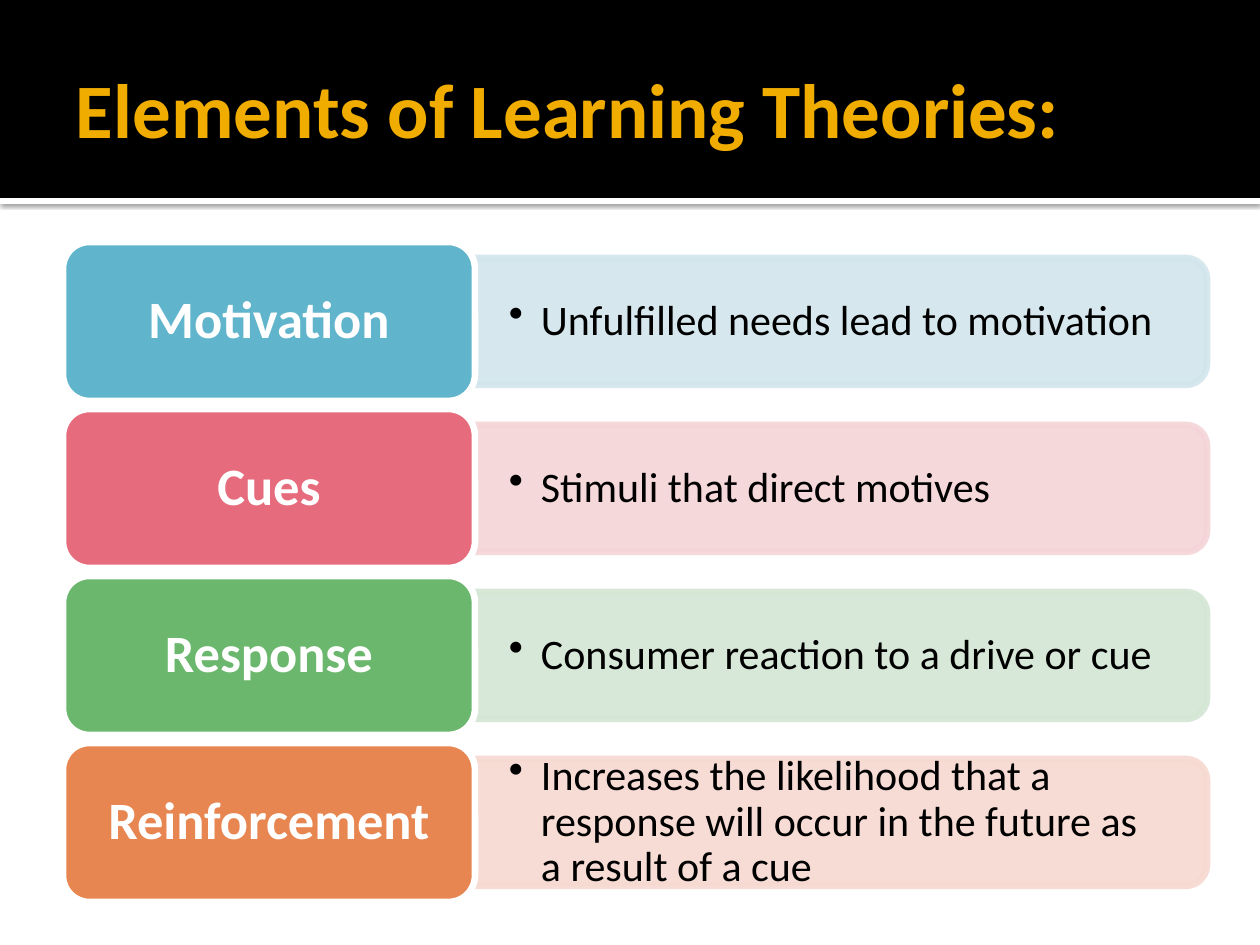
from lxml.etree import SubElement
from pptx import Presentation
from pptx.dml.color import RGBColor
from pptx.enum.shapes import MSO_SHAPE as Shape
from pptx.enum.text import MSO_ANCHOR as Anchor, MSO_AUTO_SIZE as AutoSize, PP_ALIGN as Align
from pptx.oxml.ns import qn
from pptx.util import Pt

PX = 914400 / 126
BLACK = RGBColor(0x00, 0x00, 0x00)
WHITE = RGBColor(0xFF, 0xFF, 0xFF)
GOLD = RGBColor(0xF0, 0xAD, 0x00)
BLUE, PALE_BLUE = RGBColor(0x60, 0xB5, 0xCC), RGBColor(0xD2, 0xE5, 0xEC)
PINK, PALE_PINK = RGBColor(0xE6, 0x6C, 0x7D), RGBColor(0xF5, 0xD4, 0xD7)
GREEN, PALE_GREEN = RGBColor(0x6B, 0xB7, 0x6D), RGBColor(0xD4, 0xE6, 0xD4)
ORANGE, PALE_ORANGE = RGBColor(0xE8, 0x86, 0x51), RGBColor(0xF6, 0xD9, 0xD0)

ELEMENTS = [
    ("Motivation", "Unfulfilled needs lead to motivation", BLUE, PALE_BLUE),
    ("Cues", "Stimuli that direct motives", PINK, PALE_PINK),
    ("Response", "Consumer reaction to a drive or cue", GREEN, PALE_GREEN),
    ("Reinforcement",
     "Increases the likelihood that a response will occur in the future as a result of a cue",
     ORANGE, PALE_ORANGE),
]
FIRST_TOP, ROW_PITCH = 242, 167
LABEL_LEFT, LABEL_WIDTH, LABEL_HEIGHT = 63, 412, 159
BAR_LEFT, BAR_WIDTH, BAR_HEIGHT = 474, 733, 127


def write_text(shape, text, size, color, bold=False, align=Align.LEFT,
               insets=(13, 6, 6, 6), spacing=1.0, bullet_indent=0):
    frame = shape.text_frame
    frame.word_wrap = True
    frame.auto_size = AutoSize.NONE
    frame.vertical_anchor = Anchor.MIDDLE
    frame.margin_left, frame.margin_top, frame.margin_right, frame.margin_bottom = (
        round(inset * PX) for inset in insets)
    paragraph = frame.paragraphs[0]
    paragraph.alignment = align
    paragraph.line_spacing = spacing
    if bullet_indent:
        properties = paragraph._p.get_or_add_pPr()
        properties.set("marL", str(round(bullet_indent * PX)))
        properties.set("indent", str(round(-bullet_indent * PX)))
        SubElement(properties, qn("a:buChar"), char="•")
    run = paragraph.add_run()
    run.text = text
    run.font.name = "Calibri"
    run.font.size = Pt(size)
    run.font.bold = bold
    run.font.color.rgb = color


def add_box(slide, kind, left, top, width, height, fill, line=None):
    shape = slide.shapes.add_shape(kind, *(round(n * PX) for n in (left, top, width, height)))
    shape.shadow.inherit = False
    shape.fill.solid()
    shape.fill.fore_color.rgb = fill
    if line is None:
        shape.line.fill.background()
    else:
        shape.line.color.rgb = line
        shape.line.width = Pt(3.78)
    return shape


presentation = Presentation()
presentation.slide_width = round(1260 * PX)
presentation.slide_height = round(945 * PX)
slide = presentation.slides.add_slide(presentation.slide_layouts[5])

band = add_box(slide, Shape.RECTANGLE, 0, 198, 1260, 6, WHITE)
effects = band._element.spPr.find(qn("a:effectLst"))
shadow = SubElement(effects, qn("a:outerShdw"), blurRad=str(Pt(2.5)), dist=str(Pt(0.8)),
                    dir="5400000", algn="tl", rotWithShape="0")
shadow_color = SubElement(shadow, qn("a:srgbClr"), val=str(BLACK))
SubElement(shadow_color, qn("a:alpha"), val="60000")
add_box(slide, Shape.RECTANGLE, 0, 0, 1260, 198, BLACK)

title = slide.shapes.title
title.left, title.top, title.width, title.height = (round(n * PX) for n in (63, 21, 1134, 173))
write_text(title, "Elements of Learning Theories:", size=44, color=GOLD, bold=True)
slide.shapes._spTree.append(title._element)

for row, (name, description, color, pale) in enumerate(ELEMENTS):
    top = FIRST_TOP + row * ROW_PITCH
    bar_top = top + (LABEL_HEIGHT - BAR_HEIGHT) // 2
    turn = (BAR_WIDTH - BAR_HEIGHT) // 2
    bar = add_box(slide, Shape.ROUND_2_SAME_RECTANGLE, BAR_LEFT + turn, bar_top - turn,
                  BAR_HEIGHT, BAR_WIDTH, pale, line=pale)
    bar.rotation = 90
    for bar_color in bar._element.spPr.iter(qn("a:srgbClr")):
        SubElement(bar_color, qn("a:alpha"), val="90000")

    text_box = slide.shapes.add_textbox(
        *(round(n * PX) for n in (BAR_LEFT + 1, bar_top + 6, 726, 115)))
    write_text(text_box, description, size=24, color=BLACK, insets=(34, 17, 34, 17),
               spacing=0.9, bullet_indent=32)

    label = add_box(slide, Shape.ROUNDED_RECTANGLE, LABEL_LEFT, top, LABEL_WIDTH, LABEL_HEIGHT,
                    color, line=WHITE)
    write_text(label, name, size=30, color=WHITE, bold=True, align=Align.CENTER,
               insets=(23, 15, 23, 15), spacing=0.9)

presentation.save("out.pptx")
